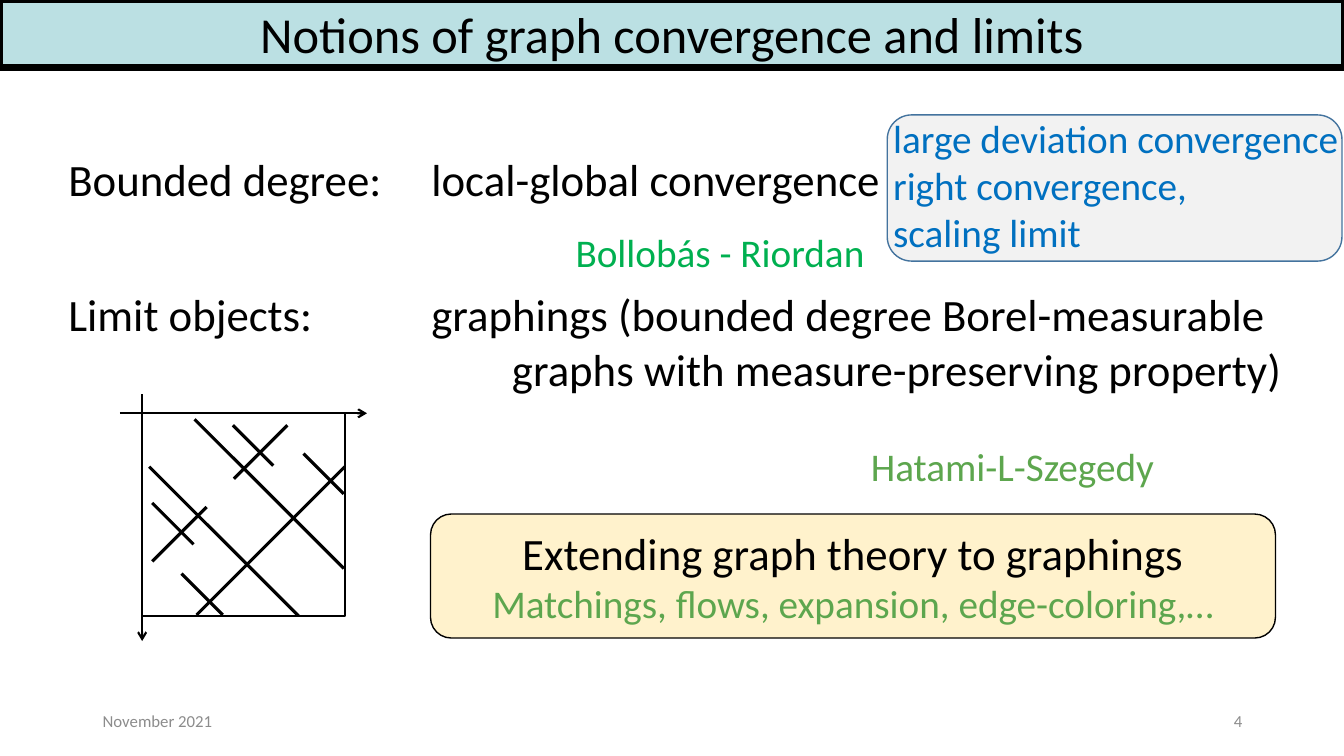
"""Build the slide on graph convergence and limit objects."""
from dataclasses import dataclass

from pptx import Presentation
from pptx import util as u
from pptx.dml.color import RGBColor
from pptx.enum import shapes, text
from pptx.oxml.ns import qn
from lxml import etree


@dataclass(frozen=True)
class Theme:
    font: str = "Calibri"
    black: str = "000000"
    grey: str = "8C8C8C"
    leaf: str = "5DA64E"
    green: str = "00B050"
    blue: str = "0070C0"
    band: str = "BBE0E3"
    panel: str = "F2F2F2"
    panel_line: str = "43739E"
    cream: str = "FFF2CC"
    title: int = 36
    body: int = 32
    note: int = 28
    footer: int = 12


T = Theme()
PX = 9144
SLIDE = (1333, 750)
LEFT, CENTER, RIGHT = text.PP_ALIGN.LEFT, text.PP_ALIGN.CENTER, text.PP_ALIGN.RIGHT
TOP, MIDDLE = text.MSO_ANCHOR.TOP, text.MSO_ANCHOR.MIDDLE
RECT, ROUND = shapes.MSO_SHAPE.RECTANGLE, shapes.MSO_SHAPE.ROUNDED_RECTANGLE

TITLE = [("Notions of graph convergence and limits", T.title, T.black)]
CALLOUT = [
    ("Extending graph theory to graphings", T.body, T.black),
    ("Matchings, flows, expansion, edge-coloring,…", T.note, T.leaf),
]
PANELS = [
    ((0, 0, 1333, 67), RECT, T.band, T.black, 4.5, TITLE),
    ((880, 114, 451, 145), ROUND, T.panel, T.panel_line, 1, []),
    ((427, 510, 838, 123), ROUND, T.cream, T.black, 1, CALLOUT),
    ((141, 410, 201, 201), RECT, None, T.black, 1.5, []),
]
NOTIONS = [
    ("large deviation convergence", T.note, T.blue),
    ("right convergence,", T.note, T.blue),
    ("scaling limit", T.note, T.blue),
]
LABELS = [
    ((58, 146, 340, 64), [("Bounded degree:", T.body, T.black)], LEFT, TOP),
    ((418, 146, 480, 64), [("local-global convergence", T.body, T.black)], LEFT, TOP),
    ((58, 280, 340, 64), [("Limit objects:", T.body, T.black)], LEFT, TOP),
    ((418, 280, 880, 64),
     [("graphings (bounded degree Borel-measurable", T.body, T.black)], LEFT, TOP),
    ((498, 334, 800, 64),
     [("graphs with measure-preserving property)", T.body, T.black)], LEFT, TOP),
    ((854, 434, 320, 57), [("Hatami-L-Szegedy", T.note, T.leaf)], LEFT, TOP),
    ((561, 222, 310, 57), [("Bollobás - Riordan", T.note, T.green)], LEFT, TOP),
    ((876, 108, 485, 151), NOTIONS, LEFT, TOP),
    ((92, 695, 300, 40), [("November 2021", T.footer, T.grey)], LEFT, MIDDLE),
    ((942, 695, 300, 40), [("4", T.footer, T.grey)], RIGHT, MIDDLE),
]
AXES = [(141, 391, 141, 636), (119, 410, 364, 410)]
FALLING, RISING = 1, -1
DIAGONALS = [
    (231, 422, 40, FALLING), (151, 499, 41, FALLING), (232, 475, 53, RISING),
    (151, 557, 54, RISING), (148, 463, 148, FALLING), (193, 416, 148, FALLING),
    (195, 610, 147, RISING), (180, 569, 41, FALLING), (301, 450, 40, FALLING),
]


def emu(lengths):
    return [n * PX for n in lengths]


def rgb(color):
    return RGBColor.from_string(color)


def write(tf, lines, align, anchor):
    tf.vertical_anchor = anchor
    tf.text = "\n".join(line for line, _, _ in lines)
    for p, (_, size, color) in zip(tf.paragraphs, lines):
        p.alignment = align
        for r in p.runs:
            r.font.name = T.font
            r.font.size = u.Pt(size)
            r.font.color.rgb = rgb(color)


def add_panel(s, box, kind, fill, line, width, lines):
    sp = s.shapes.add_shape(kind, *emu(box))
    sp.shadow.inherit = False
    if fill:
        sp.fill.solid()
        sp.fill.fore_color.rgb = rgb(fill)
    else:
        sp.fill.background()
    sp.line.color.rgb = rgb(line)
    sp.line.width = u.Pt(width)
    if lines:
        write(sp.text_frame, lines, CENTER, MIDDLE)


def add_label(s, box, lines, align, anchor):
    tf = s.shapes.add_textbox(*emu(box)).text_frame
    tf.word_wrap = True
    write(tf, lines, align, anchor)


def add_line(s, ends, width, arrow=False):
    sp = s.shapes.add_connector(shapes.MSO_CONNECTOR.STRAIGHT, *emu(ends))
    sp.line.color.rgb = rgb(T.black)
    sp.line.width = u.Pt(width)
    if arrow:
        etree.SubElement(sp.line._get_or_add_ln(), qn("a:tailEnd"), type="arrow")
    etree.SubElement(sp._element.spPr, qn("a:effectLst"))


def main():
    prs = Presentation()
    prs.slide_width, prs.slide_height = emu(SLIDE)
    s = prs.slides.add_slide(prs.slide_layouts[6])
    for panel in PANELS:
        add_panel(s, *panel)
    for axis in AXES:
        add_line(s, axis, 1.5, arrow=True)
    for x, y, run, slope in DIAGONALS:
        add_line(s, (x, y, x + run, y + slope * run), 2.25)
    for label in LABELS:
        add_label(s, *label)
    prs.save("out.pptx")


if __name__ == "__main__":
    main()
